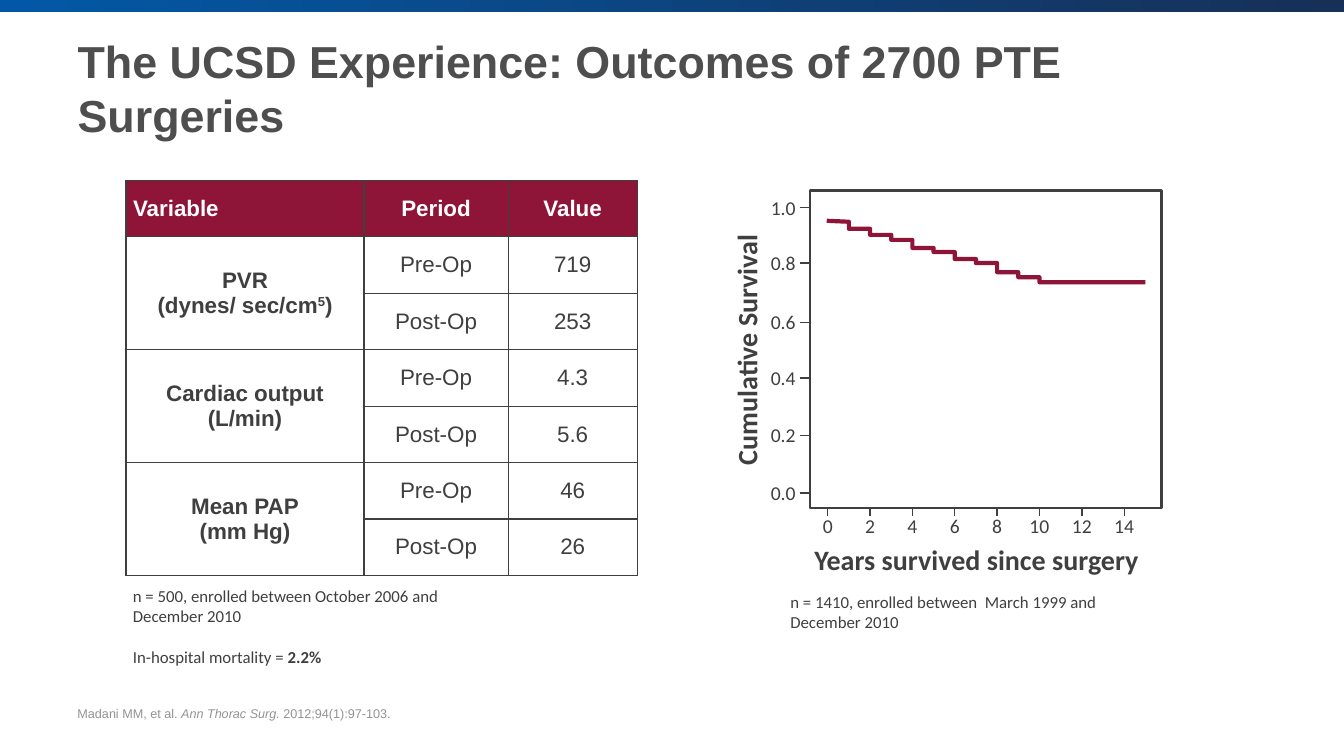
from dataclasses import dataclass

from lxml import etree
from pptx import Presentation
from pptx import util as u
from pptx.dml.color import RGBColor
from pptx.enum import shapes, text
from pptx.oxml import ns

ALIGN = text.PP_ALIGN
MIDDLE = text.MSO_ANCHOR.MIDDLE


@dataclass(frozen=True)
class Theme:
    heading: str = "4D4E4D"
    ink: str = "3F3F3F"
    accent: str = "8E1537"
    paper: str = "FFFFFF"
    muted: str = "939393"
    band_start: str = "0258A6"
    band_end: str = "173057"
    sans: str = "Arial"
    plot_font: str = "Calibri"
    title_size: int = 32
    axis_title_size: int = 20
    table_size: int = 16
    tick_size: int = 14
    note_size: int = 12
    source_size: int = 9


def add_span(para, content, font, size, color, bold=False, italic=False, raised=False):
    """Append one formatted run to a paragraph."""
    span = para.add_run()
    span.text = content
    span.font.name = font
    span.font.size = u.Pt(size)
    span.font.bold = bold
    span.font.italic = italic
    span.font.color.rgb = RGBColor.from_string(color)
    if raised:
        span.font._element.set("baseline", "30000")


def fill_frame(frame, paragraphs, align=ALIGN.LEFT, space_before=0, **style):
    """Fill a frame; each paragraph is a list of (text, overrides) spans."""
    for index, spans in enumerate(paragraphs):
        para = frame.add_paragraph() if index else frame.paragraphs[0]
        para.alignment = align
        if index:
            para.space_before = u.Pt(space_before)
        for content, overrides in spans:
            add_span(para, content, **{**style, **overrides})


def add_border(cell, color, width):
    properties = cell._tc.get_or_add_tcPr()
    for position, side in enumerate(("lnL", "lnR", "lnT", "lnB")):
        line = etree.Element(ns.qn(f"a:{side}"), w=str(u.Pt(width)))
        fill = etree.SubElement(line, ns.qn("a:solidFill"))
        etree.SubElement(fill, ns.qn("a:srgbClr"), val=color)
        properties.insert(position, line)


class SlideBuilder:
    def __init__(self, page, theme):
        self.page = page
        self.theme = theme

    def title(self, content, left, top, width, height):
        box = self.page.shapes.title
        box.left, box.top, box.width, box.height = map(u.Inches, (left, top, width, height))
        box.text_frame.vertical_anchor = MIDDLE
        theme = self.theme
        fill_frame(box.text_frame, [[(content, {})]], font=theme.sans,
                   size=theme.title_size, color=theme.heading, bold=True)

    def textbox(self, paragraphs, left, top, width, height, wrap=True,
                anchor=text.MSO_ANCHOR.TOP, rotation=0, **style):
        box = self.page.shapes.add_textbox(*map(u.Inches, (left, top, width, height)))
        box.rotation = rotation
        box.text_frame.word_wrap = wrap
        box.text_frame.vertical_anchor = anchor
        defaults = {"font": self.theme.plot_font, "color": self.theme.ink}
        fill_frame(box.text_frame, paragraphs, **{**defaults, **style})

    def label(self, content, left, top, width, height, **style):
        self.textbox([[(content, {})]], left, top, width, height, wrap=False, **style)

    def rectangle(self, left, top, width, height):
        box = self.page.shapes.add_shape(
            shapes.MSO_SHAPE.RECTANGLE, *map(u.Inches, (left, top, width, height)))
        box.shadow.inherit = False
        return box

    def band(self, *place):
        box = self.rectangle(*place)
        box.line.fill.background()
        box.fill.gradient()
        box.fill.gradient_angle = 0
        colors = (self.theme.band_start, self.theme.band_end)
        for stop, color in zip(box.fill.gradient_stops, colors):
            stop.color.rgb = RGBColor.from_string(color)

    def outline(self, shape, color, width):
        shape.line.color.rgb = RGBColor.from_string(color)
        shape.line.width = u.Pt(width)

    def plot_frame(self, *place):
        box = self.rectangle(*place)
        box.fill.background()
        self.outline(box, self.theme.ink, 1.5)

    def tick(self, *ends):
        line = self.page.shapes.add_connector(
            shapes.MSO_CONNECTOR.STRAIGHT, *map(u.Inches, ends))
        self.outline(line, self.theme.ink, 1)
        etree.SubElement(line._element.spPr, ns.qn("a:effectLst"))

    def curve(self, points):
        corners = [(u.Inches(x), u.Inches(y)) for x, y in points]
        builder = self.page.shapes.build_freeform(*corners[0])
        builder.add_line_segments(corners[1:], close=False)
        stroke = builder.convert_to_shape()
        stroke.shadow.inherit = False
        stroke.fill.background()
        self.outline(stroke, self.theme.accent, 3)

    def cell(self, cell, paragraphs, fill, **style):
        cell.vertical_anchor = MIDDLE
        cell.margin_left = cell.margin_right = u.Inches(0.07)
        cell.margin_top = cell.margin_bottom = u.Inches(0.04)
        cell.fill.solid()
        cell.fill.fore_color.rgb = RGBColor.from_string(fill)
        add_border(cell, self.theme.ink, 1)
        fill_frame(cell.text_frame, paragraphs, font=self.theme.sans,
                   size=self.theme.table_size, **style)

    def outcomes_table(self, headers, outcomes, left, top, widths, row_height):
        """Draw a merged variable cell beside its pre-op and post-op rows."""
        theme = self.theme
        rows = 1 + 2 * len(outcomes)
        table = self.page.shapes.add_table(
            rows, len(widths), u.Inches(left), u.Inches(top),
            u.Inches(sum(widths)), u.Inches(rows * row_height)).table
        for column, width in zip(table.columns, widths):
            column.width = u.Inches(width)
        for row in table.rows:
            row.height = u.Inches(row_height)
        for column, header in enumerate(headers):
            self.cell(table.cell(0, column), [[(header, {})]], theme.accent, bold=True,
                      color=theme.paper, align=ALIGN.CENTER if column else ALIGN.LEFT)
        body = {"fill": theme.paper, "color": theme.ink, "align": ALIGN.CENTER}
        for index, (variable, values) in enumerate(outcomes):
            first = 1 + 2 * index
            table.cell(first, 0).merge(table.cell(first + 1, 0))
            self.cell(table.cell(first, 0), variable, bold=True, **body)
            self.cell(table.cell(first + 1, 0), [], **body)
            for row, pair in enumerate(zip(("Pre-Op", "Post-Op"), values), first):
                for column, content in enumerate(pair, 1):
                    self.cell(table.cell(row, column), [[(content, {})]], **body)

    def survival_plot(self):
        theme = self.theme
        left, top, width, height = 8.03, 1.89, 3.49, 3.15
        bottom = top + height
        self.plot_frame(left, top, width, height)
        tick_heights = (2.06, 2.61, 3.2, 3.75, 4.32, 4.89)
        for index, y in enumerate(tick_heights):
            self.tick(left - 0.1, y, left, y)
            self.label(f"{1 - index / 5:.1f}", 7.54, y - 0.17, 0.45, 0.34,
                       size=theme.tick_size, align=ALIGN.RIGHT)
        for year in range(0, 16, 2):
            x = 8.21 + 0.21 * year
            self.tick(x, bottom + 0.08, x, bottom)
            self.label(str(year), x - 0.2, 5.05, 0.4, 0.34,
                       size=theme.tick_size, align=ALIGN.CENTER)
        axis_title = {"size": theme.axis_title_size, "bold": True, "align": ALIGN.CENTER}
        self.label("Cumulative Survival", 6.15, 3.25, 2.51, 0.44, rotation=270, **axis_title)
        self.label("Years survived since surgery", 7.96, 5.33, 3.45, 0.44, **axis_title)

        levels = (2.2, 2.27, 2.33, 2.38, 2.46, 2.5, 2.57, 2.61, 2.7, 2.75, 2.8)
        points = [(8.2, 2.19)]
        for year, (before, after) in enumerate(zip(levels, levels[1:]), 1):
            x = 8.21 + 0.21 * year
            points += [(x, before), (x, after)]
        self.curve(points + [(11.36, levels[-1])])


def main():
    theme = Theme()
    deck = Presentation()
    deck.slide_width, deck.slide_height = u.Inches(13.33), u.Inches(7.5)
    page = deck.slides.add_slide(deck.slide_layouts.get_by_name("Title Only"))
    slide = SlideBuilder(page, theme)

    slide.band(0, 0, 13.33, 0.12)
    slide.title("The UCSD Experience: Outcomes of 2700 PTE Surgeries", 0.67, 0.22, 11.75, 1.3)
    outcomes = [
        ([[("PVR", {})],
          [("(dynes/ sec/cm", {}), ("5", {"raised": True}), (")", {})]], ("719", "253")),
        ([[("Cardiac output (L/min)", {})]], ("4.3", "5.6")),
        ([[("Mean PAP", {})], [("(mm Hg)", {})]], ("46", "26")),
    ]
    slide.outcomes_table(("Variable", "Period", "Value"), outcomes,
                         1.25, 1.79, (2.36, 1.43, 1.28), 0.56)
    slide.textbox([[("n = 500, enrolled between October 2006 and December 2010", {})],
                   [("In-hospital mortality =", {}), (" 2.2%", {"bold": True})]],
                  1.22, 5.76, 3.86, 0.91, size=theme.note_size, space_before=14.6)
    slide.textbox([[("n = 1410, enrolled between  March 1999 and December 2010", {})]],
                  7.74, 5.82, 3.7, 0.5, size=theme.note_size)
    slide.survival_plot()
    slide.textbox([[("Madani MM, et al. ", {}), ("Ann Thorac Surg. ", {"italic": True}),
                    ("2012;94(1):97-103.", {})]], 0.67, 6.88, 4.95, 0.4, anchor=MIDDLE,
                  font=theme.sans, size=theme.source_size, color=theme.muted)
    deck.save("out.pptx")


if __name__ == "__main__":
    main()
